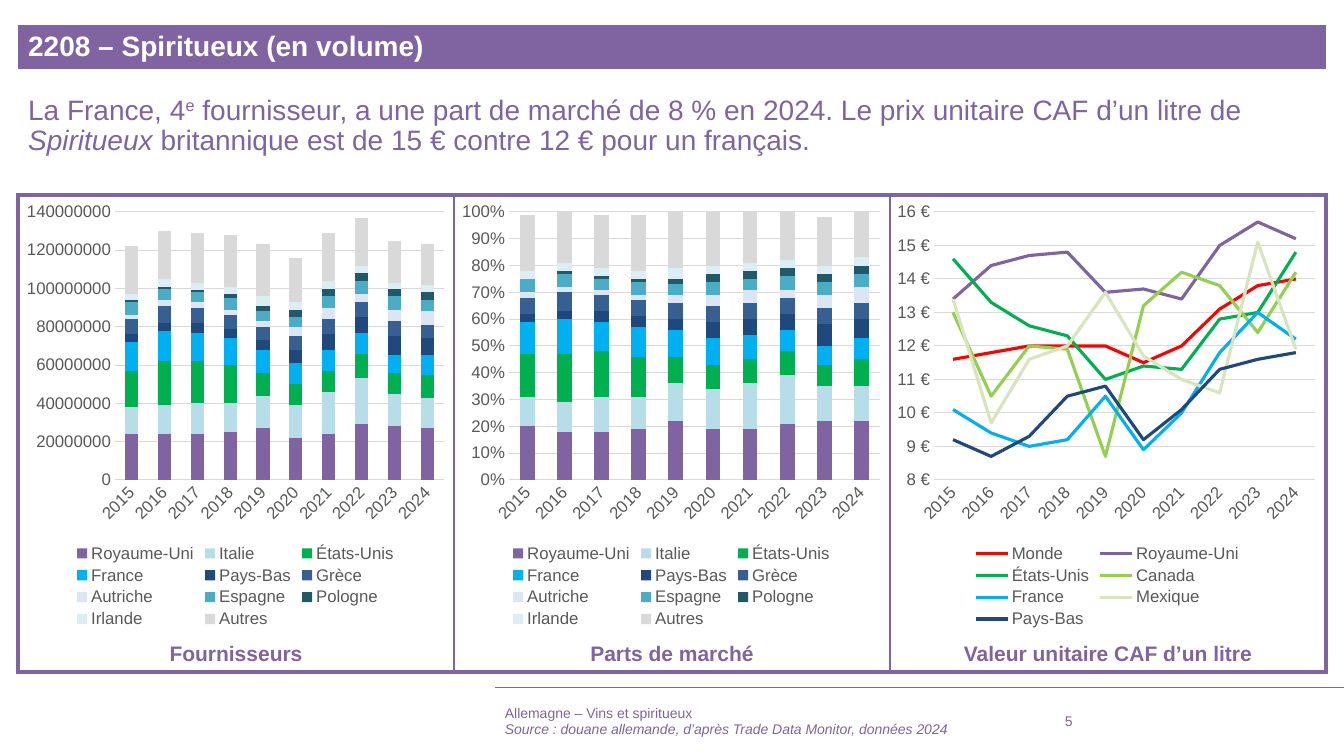
import pptx
import pptx.util
import pptx.oxml
import pptx.oxml.ns
import pptx.chart.data
from pptx.dml.color import RGBColor
from pptx.enum.chart import XL_CHART_TYPE, XL_LEGEND_POSITION, XL_MARKER_STYLE, XL_TICK_MARK
from pptx.enum.shapes import MSO_CONNECTOR
from pptx.enum.text import MSO_ANCHOR, MSO_AUTO_SIZE, PP_ALIGN

PURPLE, GREY, GRID = "8064A2", "595959", "D9D9D9"
FONT = "Arial"
color = RGBColor.from_string


def px(length):
    return round(length * 914400 / 100.8)


def write(shape, box, paragraphs, size, hex_color, bold=False, anchor=MSO_ANCHOR.TOP,
          align=PP_ALIGN.LEFT, spacing=1.0):
    """Place a text shape; a run is (text, style), style being "", "i" or "sup"."""
    shape.left, shape.top, shape.width, shape.height = map(px, box)
    frame = shape.text_frame
    frame.word_wrap = True
    frame.auto_size = MSO_AUTO_SIZE.NONE
    frame.vertical_anchor = anchor
    for index, runs in enumerate(paragraphs):
        paragraph = frame.add_paragraph() if index else frame.paragraphs[0]
        paragraph.alignment = align
        paragraph.line_spacing = spacing
        paragraph.space_before = pptx.util.Pt(0)
        if shape.is_placeholder:
            properties = paragraph._p.get_or_add_pPr()
            properties.set("marL", "0")
            properties.set("indent", "0")
            properties.append(pptx.oxml.parse_xml(
                f'<a:buNone {pptx.oxml.ns.nsdecls("a")}/>'))
        for text, style in runs:
            run = paragraph.add_run()
            run.text = text
            run.font.name, run.font.size = FONT, pptx.util.Pt(size)
            run.font.bold, run.font.italic = bold, style == "i"
            run.font.color.rgb = color(hex_color)
            if style == "sup":
                run._r.get_or_add_rPr().set("baseline", "30000")


deck = pptx.Presentation()
deck.slide_width, deck.slide_height = px(1344), px(756)
slide = deck.slides.add_slide(deck.slide_layouts[1])
shapes = slide.shapes

# Heading banner and key message
banner = shapes.title
banner.fill.solid()
banner.fill.fore_color.rgb = color(PURPLE)
write(banner, (18, 25, 1308, 44), [[("2208 – Spiritueux (en volume)", "")]],
      20, "FFFFFF", bold=True, anchor=MSO_ANCHOR.MIDDLE, spacing=0.9)
write(slide.placeholders[1], (18, 91, 1306, 82), [[
    ("La France, 4", ""), ("e", "sup"),
    (" fournisseur, a une part de marché de 8 % en 2024. Le prix unitaire CAF d’un litre de ", ""),
    ("Spiritueux", "i"),
    (" britannique est de 15 € contre 12 € pour un français.", "")]],
    20, PURPLE, spacing=0.9)

# Frame of three panels
LEFT, TOP, PANEL, HEIGHT = 18, 195, 436, 477
panels = shapes.add_table(1, 3, px(LEFT), px(TOP), px(3 * PANEL), px(HEIGHT)).table
panels.first_row = panels.horz_banding = False
for column in range(3):
    cell = panels.cell(0, column)
    cell.fill.background()
    borders = {"lnL": 1 if column else 3, "lnR": 3 if column == 2 else 1, "lnT": 3, "lnB": 3}
    for position, (side, points) in enumerate(borders.items()):
        cell._tc.get_or_add_tcPr().insert(position, pptx.oxml.parse_xml(
            f'<a:{side} {pptx.oxml.ns.nsdecls("a")} w="{points * 12700}"><a:solidFill>'
            f'<a:srgbClr val="{PURPLE}"/></a:solidFill></a:{side}>'))

# Chart data: volumes in millions of litres, shares in percent, prices in euros
years = [str(year) for year in range(2015, 2025)]
supplier_colors = {
    "Royaume-Uni": PURPLE, "Italie": "B7DEE8", "États-Unis": "00B050", "France": "00B0F0",
    "Pays-Bas": "1F497D", "Grèce": "376092", "Autriche": "DCE6F2", "Espagne": "4BACC6",
    "Pologne": "215968", "Irlande": "DBEEF4", "Autres": "D9D9D9"}
price_colors = {
    "Monde": "FF0000", "Royaume-Uni": PURPLE, "États-Unis": "00B050", "Canada": "92D050",
    "France": "00B0F0", "Mexique": "D7E4BD", "Pays-Bas": "1F497D"}
volumes = [
    [24, 24, 24, 25, 27, 22, 24, 29, 28, 27],
    [14, 15, 16, 15, 17, 17, 22, 24, 17, 16],
    [19, 23, 22, 20, 12, 11, 11, 13, 11, 12],
    [15, 16, 15, 14, 12, 11, 11, 11, 9, 10],
    [4, 4, 5, 5, 5, 7, 8, 8, 10, 9],
    [8, 9, 8, 7, 7, 7, 8, 8, 8, 7],
    [2, 3, 3, 3, 3, 5, 6, 4, 6, 7],
    [7, 6, 5, 6, 5, 5, 6, 7, 7, 6],
    [1, 1, 1, 2, 3, 4, 4, 4, 4, 4],
    [3, 4, 4, 4, 5, 4, 4, 4, 3, 4],
    [25, 25, 26, 27, 27, 23, 25, 25, 22, 21]]
shares = [
    [20, 18, 18, 19, 22, 19, 19, 21, 22, 22],
    [11, 11, 13, 12, 14, 15, 17, 18, 13, 13],
    [16, 18, 17, 15, 10, 9, 9, 9, 8, 10],
    [12, 13, 11, 11, 10, 10, 9, 8, 7, 8],
    [3, 3, 4, 4, 4, 6, 6, 6, 8, 7],
    [6, 7, 6, 6, 6, 6, 6, 6, 6, 6],
    [2, 2, 2, 2, 3, 4, 5, 3, 5, 6],
    [5, 5, 4, 5, 4, 5, 4, 5, 5, 5],
    [0, 1, 1, 1, 2, 3, 3, 3, 3, 3],
    [3, 3, 3, 3, 4, 3, 3, 3, 3, 3],
    [21, 20, 20, 21, 22, 20, 20, 19, 18, 17]]
prices = [
    [11.6, 11.8, 12, 12, 12, 11.5, 12, 13.1, 13.8, 14],
    [13.4, 14.4, 14.7, 14.8, 13.6, 13.7, 13.4, 15, 15.7, 15.2],
    [14.6, 13.3, 12.6, 12.3, 11, 11.4, 11.3, 12.8, 13, 14.8],
    [13, 10.5, 12, 11.9, 8.7, 13.2, 14.2, 13.8, 12.4, 14.2],
    [10.1, 9.4, 9, 9.2, 10.5, 8.9, 10, 11.8, 13, 12.2],
    [13.4, 9.7, 11.6, 12, 13.6, 11.7, 11, 10.6, 15.1, 11.9],
    [9.2, 8.7, 9.3, 10.5, 10.8, 9.2, 10.1, 11.3, 11.6, 11.8]]
volumes = [[value * 1000000 for value in row] for row in volumes]
shares = [[value / 100 for value in row] for row in shares]

# Caption, kind, colours, values, axis minimum, maximum, step, format, plot left and right
STACKED, LINE = XL_CHART_TYPE.COLUMN_STACKED, XL_CHART_TYPE.LINE
charts = [
    ("Fournisseurs", STACKED, supplier_colors, volumes, 0, 140000000, 20000000, "General", 115, 444),
    ("Parts de marché", STACKED, supplier_colors, shares, 0, 1, 0.1, "0%", 509, 880),
    ("Valeur unitaire CAF d’un litre", LINE, price_colors, prices, 8, 16, 1, '#,##0\\ "€"', 934, 1315)]
CHART_WIDTH, CHART_HEIGHT = 435, 437
PLOT_TOP, PLOT_HEIGHT = 212, 268

for number, (caption, kind, palette, values, low, high, step, number_format,
             plot_left, plot_right) in enumerate(charts):
    left = LEFT + number * PANEL
    data = pptx.chart.data.CategoryChartData(number_format=number_format)
    data.categories = years
    for country, row in zip(palette, values):
        data.add_series(country, row)
    chart = shapes.add_chart(kind, px(left), px(TOP), px(CHART_WIDTH), px(CHART_HEIGHT), data).chart
    chart.has_title = False
    chart.font.name, chart.font.size = FONT, pptx.util.Pt(12)
    chart.font.color.rgb = color(GREY)
    chart.has_legend = True
    chart.legend.position = XL_LEGEND_POSITION.BOTTOM
    chart.legend.include_in_layout = False

    # Axes
    for axis in (chart.category_axis, chart.value_axis):
        axis.major_tick_mark = axis.minor_tick_mark = XL_TICK_MARK.NONE
        axis.tick_labels.font.name, axis.tick_labels.font.size = FONT, pptx.util.Pt(12)
        axis.tick_labels.font.color.rgb = color(GREY)
    year_axis, scale = chart.category_axis, chart.value_axis
    year_axis._element.txPr.find(pptx.oxml.ns.qn("a:bodyPr")).set("rot", "-2700000")
    scale.minimum_scale, scale.maximum_scale, scale.major_unit = low, high, step
    scale.tick_labels.number_format = number_format
    scale.tick_labels.number_format_is_linked = False
    scale.format.line.fill.background()
    for line in (year_axis.format.line, scale.major_gridlines.format.line):
        line.color.rgb, line.width = color(GRID), pptx.util.Pt(0.75)

    # Series
    plot = chart.plots[0]
    plot.vary_by_categories = False
    if kind == STACKED:
        plot.gap_width, plot.overlap = 150, 100
    for series, shade in zip(plot.series, palette.values()):
        if kind == STACKED:
            series.format.fill.solid()
            series.format.fill.fore_color.rgb = color(shade)
        else:
            series.smooth = False
            series.marker.style = XL_MARKER_STYLE.NONE
            series.format.line.color.rgb = color(shade)
            series.format.line.width = pptx.util.Pt(2.25)

    # Plot area inside the axes
    area = chart._chartSpace.chart.plotArea
    for layout in area.findall(pptx.oxml.ns.qn("c:layout")):
        area.remove(layout)
    place = {"x": (plot_left - left) / CHART_WIDTH, "y": (PLOT_TOP - TOP) / CHART_HEIGHT,
             "w": (plot_right - plot_left) / CHART_WIDTH, "h": PLOT_HEIGHT / CHART_HEIGHT}
    area.insert(0, pptx.oxml.parse_xml(
        f'<c:layout {pptx.oxml.ns.nsdecls("c")}><c:manualLayout><c:layoutTarget val="inner"/>'
        '<c:xMode val="edge"/><c:yMode val="edge"/>'
        + "".join(f'<c:{key} val="{part:.4f}"/>' for key, part in place.items())
        + '</c:manualLayout></c:layout>'))

    write(shapes.add_textbox(0, 0, 0, 0), (left, 636, PANEL, 35), [[(caption, "")]],
          15, PURPLE, bold=True, align=PP_ALIGN.CENTER)

# Footer
rule = shapes.add_connector(MSO_CONNECTOR.STRAIGHT, px(1344), px(687), px(495), px(687))
rule.line.color.rgb, rule.line.width = color(PURPLE), pptx.util.Pt(0.5)
rule._element.spPr.append(pptx.oxml.parse_xml(f'<a:effectLst {pptx.oxml.ns.nsdecls("a")}/>'))
footer = [[("Allemagne – Vins et spiritueux", "")],
          [("Source : douane allemande, d’après Trade Data Monitor, données 2024", "i")]]
for box, lines in [((495, 701, 547, 40), footer), ((1055, 701, 100, 40), [[("5", "")]])]:
    write(shapes.add_textbox(0, 0, 0, 0), box, lines, 10, PURPLE, anchor=MSO_ANCHOR.MIDDLE)

deck.save("out.pptx")
